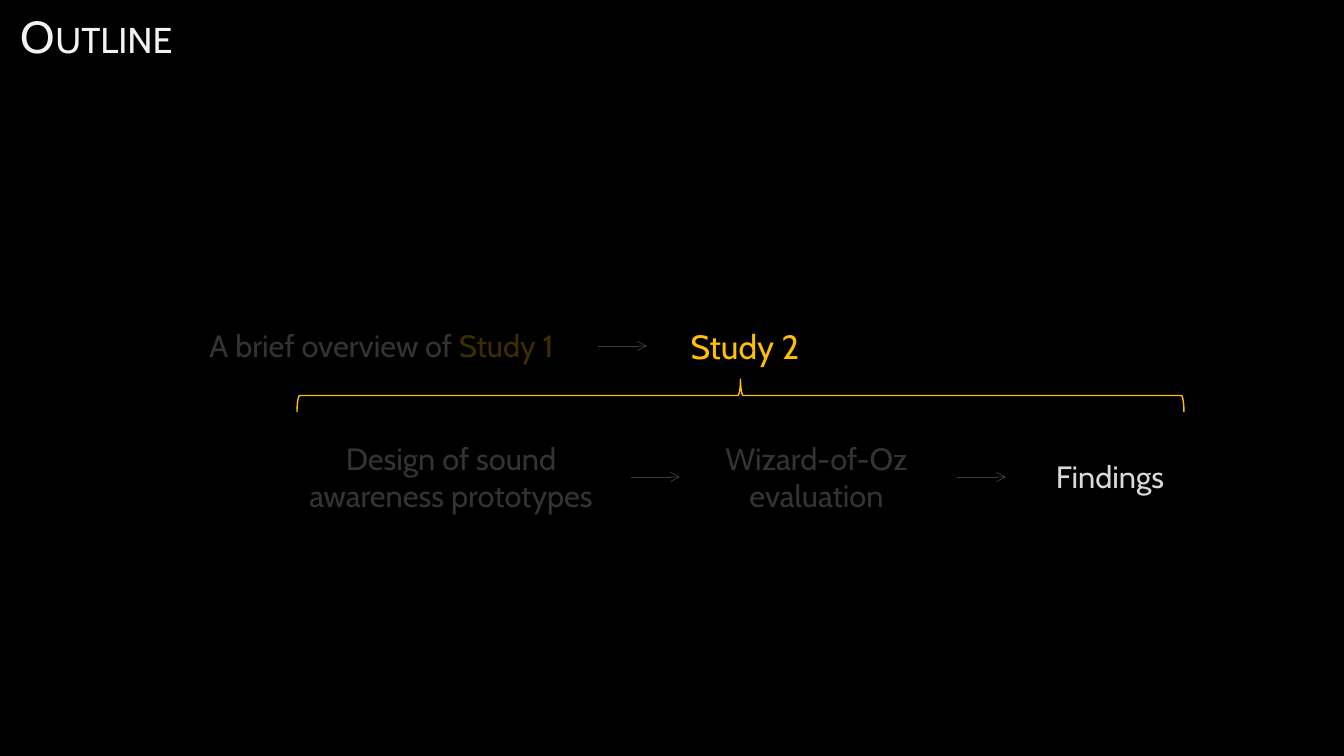
from lxml import etree
from pptx import Presentation
from pptx.dml.color import RGBColor
from pptx.enum.shapes import MSO_CONNECTOR as LINE, MSO_SHAPE as SHAPE
from pptx.enum.text import MSO_ANCHOR as ANCHOR, PP_ALIGN as ALIGN
from pptx.oxml.ns import qn
from pptx.util import Emu, Pt

BLACK = RGBColor(0x00, 0x00, 0x00)
WHITE = RGBColor(0xFF, 0xFF, 0xFF)
PALE = RGBColor(0xF2, 0xF2, 0xF2)
GREY = RGBColor(0xD9, 0xD9, 0xD9)
GOLD = RGBColor(0xFF, 0xC0, 0x00)
SCALE = 914400 / 100.8


def px(*sizes):
    return [Emu(round(size * SCALE)) for size in sizes]


def style(run, size, color):
    run.font.name = "Cabin"
    run.font.size = Pt(size)
    run.font.color.rgb = color


deck = Presentation()
deck.slide_width, deck.slide_height = px(1344, 756)
slide = deck.slides.add_slide(deck.slide_layouts[6])
slide.background.fill.solid()
slide.background.fill.fore_color.rgb = BLACK
shapes = slide.shapes

# Title
frame = shapes.add_textbox(*px(21, 9, 907, 54)).text_frame
frame.margin_left = frame.margin_right = frame.margin_top = frame.margin_bottom = 0
frame.word_wrap = True
frame.vertical_anchor = ANCHOR.MIDDLE
frame.text = "Outline"
run = frame.paragraphs[0].runs[0]
style(run, 32, PALE)
run.font._element.set("cap", "small")

# Steps of the talk
steps = [
    ((192, 322, 379, 47), "A brief overview of ", 22, GREY),
    ((674, 321, 142, 50), "Study 2", 24, GOLD),
    ((281, 435, 340, 85), "Design of sound awareness prototypes", 22, GREY),
    ((690, 435, 253, 85), "Wizard-of-Oz\nevaluation", 22, GREY),
    ((1028, 453, 164, 47), "Findings", 22, GREY),
]
for box, text, size, color in steps:
    frame = shapes.add_textbox(*px(*box)).text_frame
    frame.word_wrap = True
    frame.text = text
    for para in frame.paragraphs:
        para.alignment = ALIGN.CENTER
        style(para.runs[0], size, color)
    if text.endswith(" "):
        run = frame.paragraphs[0].add_run()
        run.text = "Study 1"
        style(run, size, GOLD)

# Arrows between steps
for left, top in [(598, 346), (631, 477), (957, 477)]:
    arrow = shapes.add_connector(LINE.STRAIGHT, *px(left, top, left + 49, top))
    arrow.line.color.rgb = WHITE
    arrow.line.width = Pt(0.5)
    etree.SubElement(arrow.line._get_or_add_ln(), qn("a:tailEnd"), type="arrow")
    etree.SubElement(arrow._element.spPr, qn("a:effectLst"))

# Brace that opens Study 2 into its parts
brace = shapes.add_shape(SHAPE.RIGHT_BRACE, *px(724, -48, 33, 887))
brace.rotation = 270
brace.shadow.inherit = False
brace.fill.background()
brace.line.color.rgb = GOLD
brace.line.width = Pt(1)

# Veils that dim the finished steps
for box in [(295, 421, 395, 169), (191, 318, 462, 54), (725, 419, 297, 137)]:
    veil = shapes.add_shape(SHAPE.RECTANGLE, *px(*box))
    veil.shadow.inherit = False
    veil.line.fill.background()
    veil.fill.solid()
    veil.fill.fore_color.rgb = BLACK
    tint = veil._element.spPr.find(qn("a:solidFill"))[0]
    etree.SubElement(tint, qn("a:alpha"), val="76000")

deck.save("out.pptx")
